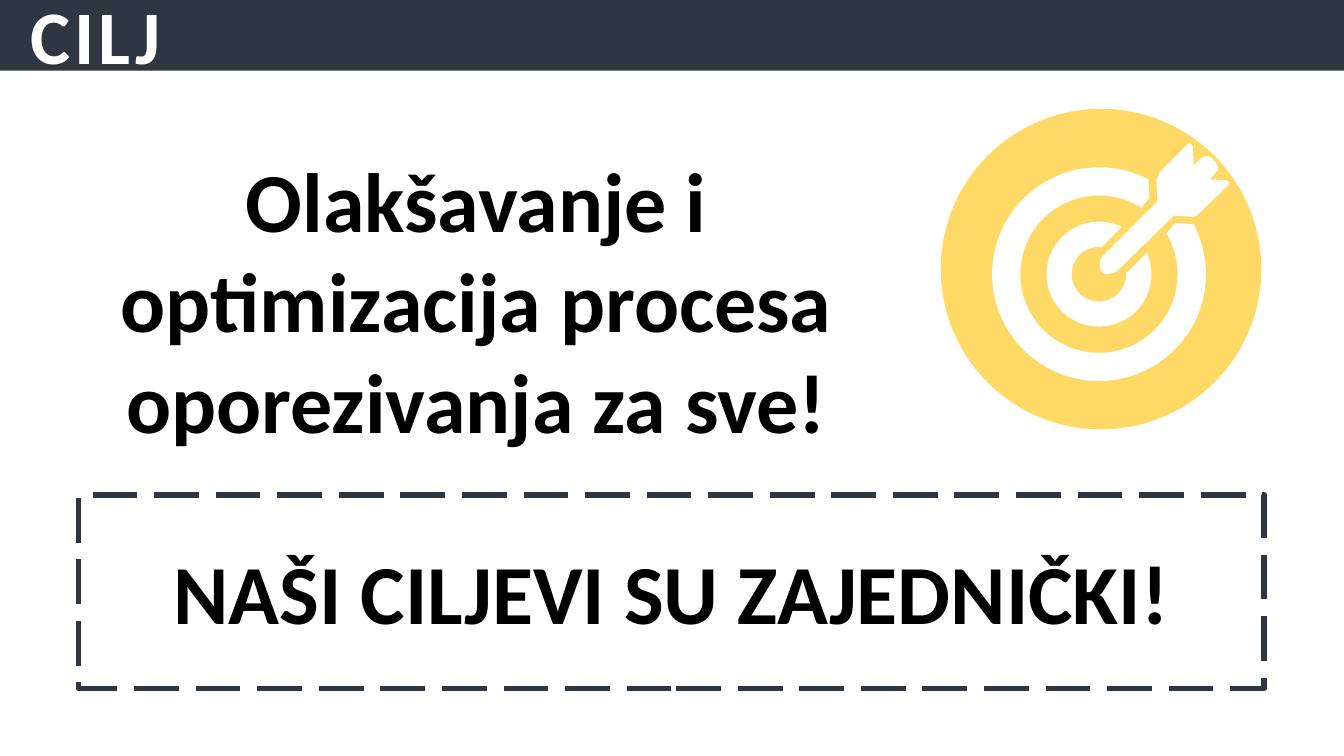
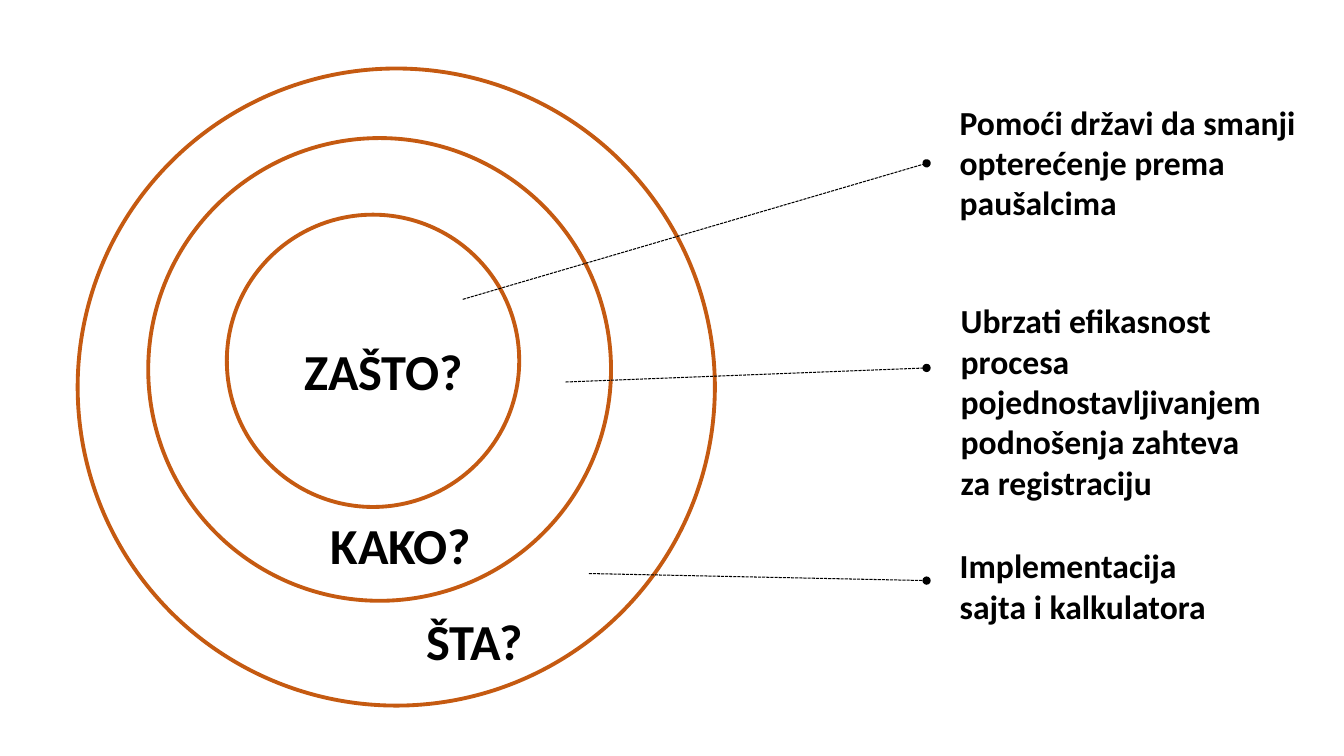
from dataclasses import dataclass

from lxml import etree
from pptx import Presentation
from pptx.dml.color import RGBColor
from pptx.enum.dml import MSO_LINE
from pptx.enum.shapes import MSO_CONNECTOR, MSO_SHAPE
from pptx.enum.text import PP_ALIGN
from pptx.oxml.ns import qn
from pptx.util import Inches, Pt

OVAL = MSO_SHAPE.OVAL
RECTANGLE = MSO_SHAPE.RECTANGLE
STRAIGHT = MSO_CONNECTOR.STRAIGHT
LONG_DASH = MSO_LINE.LONG_DASH
LEFT, CENTER = PP_ALIGN.LEFT, PP_ALIGN.CENTER

FONT = "Calibri"
COLORS = {
    "navy": "2E3641",
    "gold": "FFD966",
    "orange": "C55A11",
    "white": "FFFFFF",
    "black": "000000",
}

TARGET_CENTER = (10.9, 2.72)
TARGET_RINGS = ((1.06, "white"), (0.78, "gold"), (0.52, "white"), (0.27, "gold"))
# The gap that the dart cuts through the rings
DART_GAP = (
    (11.39, 1.7), (11.4, 1.97), (11.32, 2.06), (10.93, 2.45), (11.18, 2.7),
    (11.57, 2.31), (11.66, 2.21), (11.9, 2.23), (11.8, 1.75),
)
DART = (
    (11.8, 1.42), (11.83, 1.45), (11.84, 1.64), (11.91, 1.57), (11.95, 1.55),
    (11.99, 1.55), (12.02, 1.57), (12.06, 1.61), (12.08, 1.65), (12.08, 1.69),
    (12.06, 1.71), (12, 1.78), (12.17, 1.79), (12.19, 1.81), (12.19, 1.83),
    (11.9, 2.11), (11.87, 2.14), (11.82, 2.15), (11.64, 2.14), (11.08, 2.69),
    (11.04, 2.71), (10.97, 2.72), (10.93, 2.7), (10.91, 2.66), (10.91, 2.59),
    (10.93, 2.55), (11.48, 2), (11.47, 1.79), (11.5, 1.71), (11.78, 1.43),
)


@dataclass(frozen=True)
class Ring:
    left: float
    top: float
    size: float
    label: str
    label_box: tuple[float, float, float, float]


@dataclass(frozen=True)
class Callout:
    start: tuple[float, float]
    end_y: float
    text: str
    box: tuple[float, float, float, float]


RINGS = (
    Ring(0.77, 0.68, 6.32, "ŠTA?", (4.13, 6, 1.17, 0.71)),
    Ring(1.47, 1.37, 4.59, "KAKO?", (3.18, 5.05, 1.62, 0.71)),
    Ring(2.25, 2.13, 2.9, "ZAŠTO?", (2.92, 3.32, 1.79, 0.71)),
)
CALLOUT_X = 9.19
CALLOUTS = (
    Callout((4.59, 2.97), 1.62, "Pomoći državi da smanji opterećenje prema paušalcima",
            (9.42, 0.96, 3.57, 1.31)),
    Callout((5.61, 3.79), 3.65,
            "Ubrzati efikasnost procesa pojednostavljivanjem podnošenja zahteva za registraciju",
            (9.43, 2.93, 3.32, 2.12)),
    Callout((5.84, 5.69), 5.76, "Implementacija sajta i kalkulatora",
            (9.42, 5.36, 2.69, 0.91)),
)


def color(name: str) -> RGBColor:
    return RGBColor.from_string(COLORS[name])


def style_shape(shape, fill: str | None = None, line: str | None = None,
                width: float = 1, dash=None) -> None:
    shape.shadow.inherit = False
    if fill:
        shape.fill.solid()
        shape.fill.fore_color.rgb = color(fill)
    else:
        shape.fill.background()
    if line:
        shape.line.color.rgb = color(line)
        shape.line.width = Pt(width)
        if dash:
            shape.line.dash_style = dash
    else:
        shape.line.fill.background()


def add_preset(page, kind, box: tuple, **style) -> None:
    style_shape(page.shapes.add_shape(kind, *map(Inches, box)), **style)


def add_outline(page, points: tuple, fill: str) -> None:
    """Draw a closed, filled polygon through points given in inches."""
    start, *rest = [(Inches(x), Inches(y)) for x, y in points]
    builder = page.shapes.build_freeform(*start)
    builder.add_line_segments(rest, close=True)
    style_shape(builder.convert_to_shape(), fill=fill)


def add_text(page, text: str, box: tuple, *, size: float, ink: str = "black",
             align=LEFT, wrap: bool = True, spacing: float = 0) -> None:
    frame = page.shapes.add_textbox(*map(Inches, box)).text_frame
    frame.word_wrap = wrap
    para = frame.paragraphs[0]
    para.alignment = align
    span = para.add_run()
    span.text = text
    span.font.name = FONT
    span.font.size = Pt(size)
    span.font.bold = True
    span.font.color.rgb = color(ink)
    if spacing:
        span._r.get_or_add_rPr().set("spc", str(round(spacing * 100)))


def add_pointer(page, start: tuple, end: tuple) -> None:
    """Draw a thin dashed line that ends in a dot."""
    pointer = page.shapes.add_connector(STRAIGHT, *map(Inches, (*start, *end)))
    pointer.line.color.rgb = color("black")
    pointer.line.width = Pt(0.75)
    line = pointer.line._get_or_add_ln()
    etree.SubElement(line, qn("a:prstDash")).set("val", "sysDash")
    etree.SubElement(line, qn("a:tailEnd")).set("type", "oval")
    etree.SubElement(pointer._element.spPr, qn("a:effectLst"))


def add_target(page) -> None:
    add_preset(page, OVAL, (9.33, 1.08, 3.18, 3.18), fill="gold")
    x, y = TARGET_CENTER
    for radius, fill in TARGET_RINGS:
        add_preset(page, OVAL, (x - radius, y - radius, 2 * radius, 2 * radius), fill=fill)
    add_outline(page, DART_GAP, "gold")
    add_outline(page, DART, "white")


def add_title(page, text: str) -> None:
    add_preset(page, RECTANGLE, (0, -0.02, 13.33, 0.72), fill="navy")
    add_text(page, text, (0.2, -0.16, 2.75, 1.01), size=54, ink="white", spacing=3)


def build_goal(page) -> None:
    add_title(page, "CILJ")
    add_target(page)
    add_preset(page, RECTANGLE, (0.78, 4.91, 11.76, 1.92),
               line="navy", width=4, dash=LONG_DASH)
    add_text(page, "NAŠI CILJEVI SU ZAJEDNIČKI!", (1.57, 5.31, 10.18, 1.11),
             size=60, align=CENTER, wrap=False)
    add_text(page, "Olakšavanje i optimizacija procesa oporezivanja za sve!",
             (0.43, 1.42, 8.59, 3.13), size=60, align=CENTER)


def build_circles(page) -> None:
    for ring in RINGS:
        add_preset(page, OVAL, (ring.left, ring.top, ring.size, ring.size),
                   line="orange", width=2.75)
        add_text(page, ring.label, ring.label_box, size=36, wrap=False)
    for callout in CALLOUTS:
        add_pointer(page, callout.start, (CALLOUT_X, callout.end_y))
        add_text(page, callout.text, callout.box, size=24)


def main() -> None:
    deck = Presentation()
    deck.slide_width, deck.slide_height = Inches(13.33), Inches(7.5)
    blank = deck.slide_layouts[6]
    for build in (build_goal, build_circles):
        build(deck.slides.add_slide(blank))
    deck.save("out.pptx")


if __name__ == "__main__":
    main()
